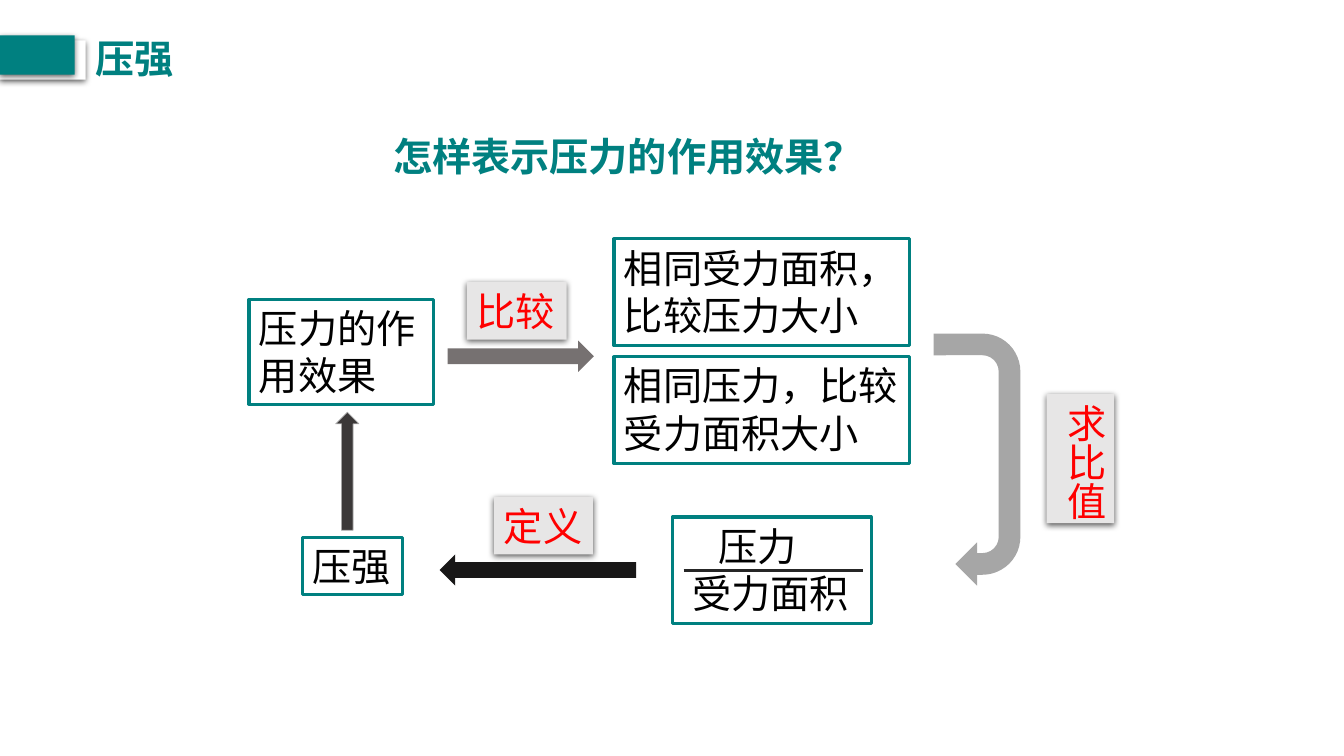
import pptx
import pptx.util
import pptx.dml.color
import pptx.enum.shapes
import pptx.enum.text
import pptx.oxml
import pptx.oxml.ns

KIND = pptx.enum.shapes.MSO_SHAPE
PX = 9144
FONT = "Noto Sans CJK SC"
TEAL, RED, BLACK, PALE = "008080", "FF0000", "000000", "E7E6E6"
SHADE = (
    f"<a:effectLst {pptx.oxml.ns.nsdecls('a')}>"
    '<a:outerShdw blurRad="57150" dist="19050" dir="5400000" algn="ctr" rotWithShape="0">'
    '<a:srgbClr val="000000"><a:alpha val="63000"/></a:srgbClr>'
    "</a:outerShdw></a:effectLst>"
)


def color(code):
    return pptx.dml.color.RGBColor.from_string(code)


class Board:
    """Draw styled shapes, labels and lines on one slide."""

    def __init__(self, deck):
        self.slide = deck.slides.add_slide(deck.slide_layouts[6])
        self.shapes = self.slide.shapes

    def group(self):
        self.shapes = self.slide.shapes.add_group_shape().shapes

    def loose(self):
        self.shapes = self.slide.shapes

    def letter(self, shape, text, ink, bold=False, wrap=True):
        frame = shape.text_frame
        frame.text = text
        frame.word_wrap = wrap
        frame.auto_size = pptx.enum.text.MSO_AUTO_SIZE.SHAPE_TO_FIT_TEXT
        frame.vertical_anchor = pptx.enum.text.MSO_ANCHOR.TOP
        for para in frame.paragraphs:
            para.alignment = pptx.enum.text.PP_ALIGN.LEFT
            for run in para.runs:
                font = run.font
                font.size = pptx.util.Pt(28)
                font.bold = bold
                font.name = FONT
                font.color.rgb = color(ink)
                east = pptx.oxml.parse_xml(
                    f'<a:ea {pptx.oxml.ns.nsdecls("a")} typeface="{FONT}"/>')
                font._element.find(pptx.oxml.ns.qn("a:latin")).addnext(east)

    def shape(self, kind, area, fill=None, line=None, width=2.25):
        item = self.shapes.add_shape(kind, *(n * PX for n in area))
        item.shadow.inherit = False
        if fill:
            item.fill.solid()
            item.fill.fore_color.rgb = color(fill)
        else:
            item.fill.background()
        if line:
            item.line.color.rgb = color(line)
            item.line.width = pptx.util.Pt(width)
        else:
            item.line.fill.background()
        return item

    def card(self, area, fill):
        item = self.shape(KIND.RECTANGLE, area, fill)
        props = item._element.spPr
        props.remove(props.find(pptx.oxml.ns.qn("a:effectLst")))
        props.append(pptx.oxml.parse_xml(SHADE))
        return item

    def label(self, area, text, wrap=False):
        item = self.card(area, PALE)
        self.letter(item, text, RED, wrap=wrap)
        return item

    def box(self, area, text, wrap=True):
        item = self.shape(KIND.RECTANGLE, area, line=TEAL)
        self.letter(item, text, BLACK, wrap=wrap)
        return item

    def title(self, area, text):
        item = self.shapes.add_textbox(*(n * PX for n in area))
        self.letter(item, text, TEAL, bold=True)

    def rule(self, left, right, top):
        item = self.shapes.add_connector(
            pptx.enum.shapes.MSO_CONNECTOR.STRAIGHT,
            left * PX, top * PX, right * PX, top * PX)
        item.line.color.rgb = color("262626")
        item.line.width = pptx.util.Pt(2.25)
        item._element.spPr.append(pptx.oxml.parse_xml(
            f"<a:effectLst {pptx.oxml.ns.nsdecls('a')}/>"))


def main():
    deck = pptx.Presentation()
    deck.slide_width, deck.slide_height = 1333 * PX, 750 * PX
    board = Board(deck)

    board.box((247, 297, 183, 104), "压力的作用效果")
    cases = ["相同受力面积，比较压力大小", "相同压力，比较受力面积大小"]
    for row, text in enumerate(cases):
        board.box((609, 237 + 117 * row, 293, 106), text)

    board.group()
    board.shape(KIND.RIGHT_ARROW, (444, 338, 145, 31), "767171")
    board.label((463, 280, 99, 57), "比较")

    board.group()
    turn = board.shape(KIND.U_TURN_ARROW, (844, 413, 250, 86), "A6A6A6")
    turn.rotation = 90
    ratio = board.label((1038, 391, 67, 128), "求比值")
    ratio.text_frame._txBody.bodyPr.set("vert", "eaVert")

    board.loose()
    part = board.box((667, 513, 197, 106), "压力\n受力面积")
    for para, indent in zip(part.text_frame.paragraphs, (36, 10)):
        para._p.get_or_add_pPr().set("marL", str(indent * PX))

    board.group()
    board.shape(KIND.LEFT_ARROW, (436, 550, 195, 31), "181717")
    board.label((490, 493, 98, 57), "定义", wrap=True)

    board.loose()
    board.box((300, 533, 99, 57), "压强", wrap=False)
    board.shape(KIND.UP_ARROW, (333, 409, 23, 117), "3B3838", "A5A5A5", 0.5)

    board.group()
    board.card((0, 40, 85, 39), "FFFFFF")
    board.card((0, 35, 74, 39), TEAL)
    board.title((85, 29, 417, 57), "压强")

    board.loose()
    board.title((380, 126, 522, 57), "怎样表示压力的作用效果？")
    board.rule(678, 856, 566)
    deck.save("out.pptx")


if __name__ == "__main__":
    main()
